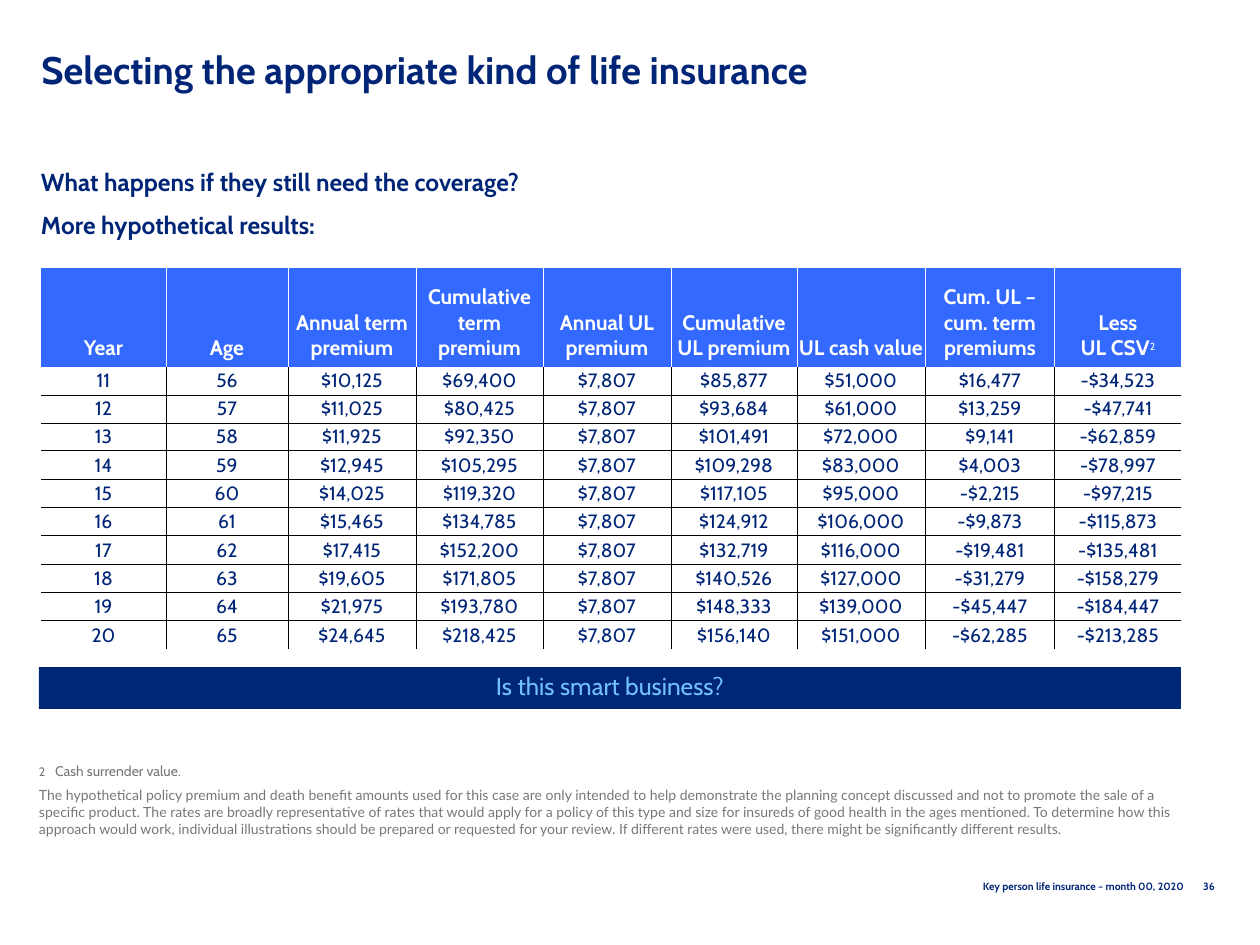
from dataclasses import dataclass
from itertools import accumulate

from lxml.etree import SubElement as Sub
from pptx import Presentation as Deck
from pptx.dml.color import RGBColor as Color
from pptx.enum.shapes import MSO_SHAPE as Shape
from pptx.enum.text import MSO_ANCHOR as Anchor, PP_ALIGN as Align
from pptx.oxml.ns import qn
from pptx.util import Pt


@dataclass(frozen=True)
class Theme:
    face: str = "Cabin"
    fine: str = "Lato"
    navy: str = "002577"
    deep: str = "002677"
    blue: str = "3369FF"
    sky: str = "73C0FF"
    gray: str = "75787B"
    white: str = "FFFFFF"
    black: str = "000000"
    title: float = 21.9
    lead: int = 14
    head: int = 12
    body: int = 11
    sup: int = 10
    note: int = 8
    mark: int = 7
    foot: int = 6
    rule: float = 0.5


T = Theme()
HEADS = ["Year", "Age", "Annual term premium", "Cumulative term premium",
         "Annual UL premium", "Cumulative UL premium", "UL cash value",
         "Cum. UL – cum. term premiums", "Less\vUL CSV"]
WIDTHS = [125, 122, 128, 127, 128, 126, 128, 130, 126]
PRIOR = 59275
TERM = [10125, 11025, 11925, 12945, 14025, 15465, 17415, 19605, 21975, 24645]
LEVEL = 7807
CASH = [51000, 61000, 72000, 83000, 95000,
        106000, 116000, 127000, 139000, 151000]
NOTE = (
    "The hypothetical policy premium and death benefit amounts used for this "
    "case are only intended to help demonstrate the planning concept discussed "
    "and not to promote the sale of a specific product. The rates are broadly "
    "representative of rates that would apply for a policy of this type and "
    "size for insureds of good health in the ages mentioned. To determine how "
    "this approach would work, individual illustrations should be prepared or "
    "requested for your review. If different rates were used, there might be "
    "significantly different results.")


def px(n):
    return round(n * 914400 / 126)


def style(para, size, color, bold=False, face=T.face, align=Align.LEFT):
    para.alignment = align
    font = para.font
    font.name, font.bold = face, bold
    font.color.rgb = Color.from_string(color)
    if size:
        font.size = Pt(size)


def inset(part, left, top, right, base):
    part.margin_left, part.margin_top = px(left), px(top)
    part.margin_right, part.margin_bottom = px(right), px(base)


def frame(slide, box, anchor=Anchor.TOP):
    text = slide.shapes.add_textbox(*map(px, box)).text_frame
    text.word_wrap = True
    text.vertical_anchor = anchor
    return text


def title(slide, box):
    para = frame(slide, box).paragraphs[0]
    para.text = "Selecting the appropriate kind of life insurance"
    para.line_spacing = Pt(18.8)
    style(para, T.title, T.navy, True)


def lead(slide, box):
    text = frame(slide, box)
    inset(text, 0, 6, 13, 6)
    text.text = ("What happens if they still need the coverage?\n"
                 "More hypothetical results:")
    for i, para in enumerate(text.paragraphs):
        para.line_spacing = 0.85
        para.space_before = Pt(5.6 if i else 0)
        para.space_after = Pt(4.2)
        style(para, T.lead, T.navy, True)


def money(n):
    return f"{'-' if n < 0 else ''}${abs(n):,}"


def rows():
    sums = list(accumulate(TERM, initial=PRIOR))[1:]
    for i, (term, total, cash) in enumerate(zip(TERM, sums, CASH)):
        year = 11 + i
        paid = LEVEL * year
        gap = paid - total
        sums_up = [term, total, LEVEL, paid, cash, gap, gap - cash]
        yield [str(year), str(56 + i), *map(money, sums_up)]


def edges(cell, **sides):
    props = cell._tc.get_or_add_tcPr()
    for side in "LRTB":
        color = sides[side]
        line = Sub(props, qn(f"a:ln{side}"), w=str(Pt(T.rule)))
        if color:
            fill = Sub(line, qn("a:solidFill"))
            Sub(fill, qn("a:srgbClr"), val=color)
        else:
            Sub(line, qn("a:noFill"))


def grid(slide, box, top_row):
    data = [HEADS, *rows()]
    last, end = len(data) - 1, len(HEADS) - 1
    table = slide.shapes.add_table(
        len(data), len(HEADS), *map(px, box)).table
    table.first_row = table.horz_banding = False
    for col, width in zip(table.columns, WIDTHS):
        col.width = px(width)
    rest = box[3] - top_row
    for r, row in enumerate(data):
        high = r * rest // last - (r - 1) * rest // last if r else top_row
        table.rows[r].height = px(high)
        ink = T.black if r else T.white
        for c, value in enumerate(row):
            cell = table.cell(r, c)
            edges(cell, L=ink if c else None, R=ink if c < end else None,
                  T=T.black if r > 1 else T.white,
                  B=T.black if 0 < r < last else T.white)
            cell.text = value
            para = cell.text_frame.paragraphs[0]
            if r:
                cell.fill.background()
                inset(cell, 1, 0, 1, 0)
                cell.vertical_anchor = Anchor.MIDDLE
                style(para, T.body, T.navy, align=Align.CENTER)
            else:
                cell.fill.solid()
                cell.fill.fore_color.rgb = Color.from_string(T.blue)
                inset(cell, 1, 13, 1, 6)
                cell.vertical_anchor = Anchor.BOTTOM
                style(para, T.head, T.white, True, align=Align.CENTER)
    mark = table.cell(0, end).text_frame.paragraphs[0].add_run()
    mark.text = "2"
    mark.font.size, mark.font.bold = Pt(T.sup), False
    mark._r.get_or_add_rPr().set("baseline", "30000")


def band(slide, box):
    bar = slide.shapes.add_shape(Shape.RECTANGLE, *map(px, box))
    bar.shadow.inherit = False
    bar.fill.solid()
    bar.fill.fore_color.rgb = Color.from_string(T.deep)
    bar.line.fill.background()
    text = bar.text_frame
    inset(text, 0, 0, 0, 0)
    text.vertical_anchor = Anchor.MIDDLE
    para = text.paragraphs[0]
    para.text = "Is this smart business?"
    para.line_spacing = 0.9
    style(para, T.lead, T.sky, align=Align.CENTER)


def notes(slide, box):
    text = frame(slide, box, Anchor.BOTTOM)
    inset(text, 0, 0, 0, 0)
    first, more = text.paragraphs[0], text.add_paragraph()
    props = first._p.get_or_add_pPr()
    props.set("marL", str(px(16)))
    props.set("indent", str(-px(16)))
    for words, size in (("2\t", T.mark), ("Cash surrender value.", T.note)):
        run = first.add_run()
        run.text, run.font.size = words, Pt(size)
    style(first, None, T.gray)
    more.text = NOTE
    more.space_before = Pt(4)
    style(more, T.note, T.gray, face=T.fine)


def foot(slide, box, words, color, anchor):
    para = frame(slide, box, anchor).paragraphs[0]
    para.text = words
    style(para, T.foot, color, True, align=Align.RIGHT)


def main():
    deck = Deck()
    deck.slide_width, deck.slide_height = px(1260), px(945)
    slide = deck.slides.add_slide(deck.slide_layouts[6])
    title(slide, (29, 53, 1191, 103))
    foot(slide, (1184, 874, 43, 19), "36", T.navy, Anchor.TOP)
    foot(slide, (770, 874, 426, 25),
         "Key person life insurance – month 00, 2020", T.deep, Anchor.MIDDLE)
    grid(slide, (41, 267, sum(WIDTHS), 383), 100)
    lead(slide, (41, 166, 1131, 88))
    notes(slide, (39, 760, 1153, 77))
    band(slide, (39, 667, 1142, 42))
    deck.save("out.pptx")


if __name__ == "__main__":
    main()
